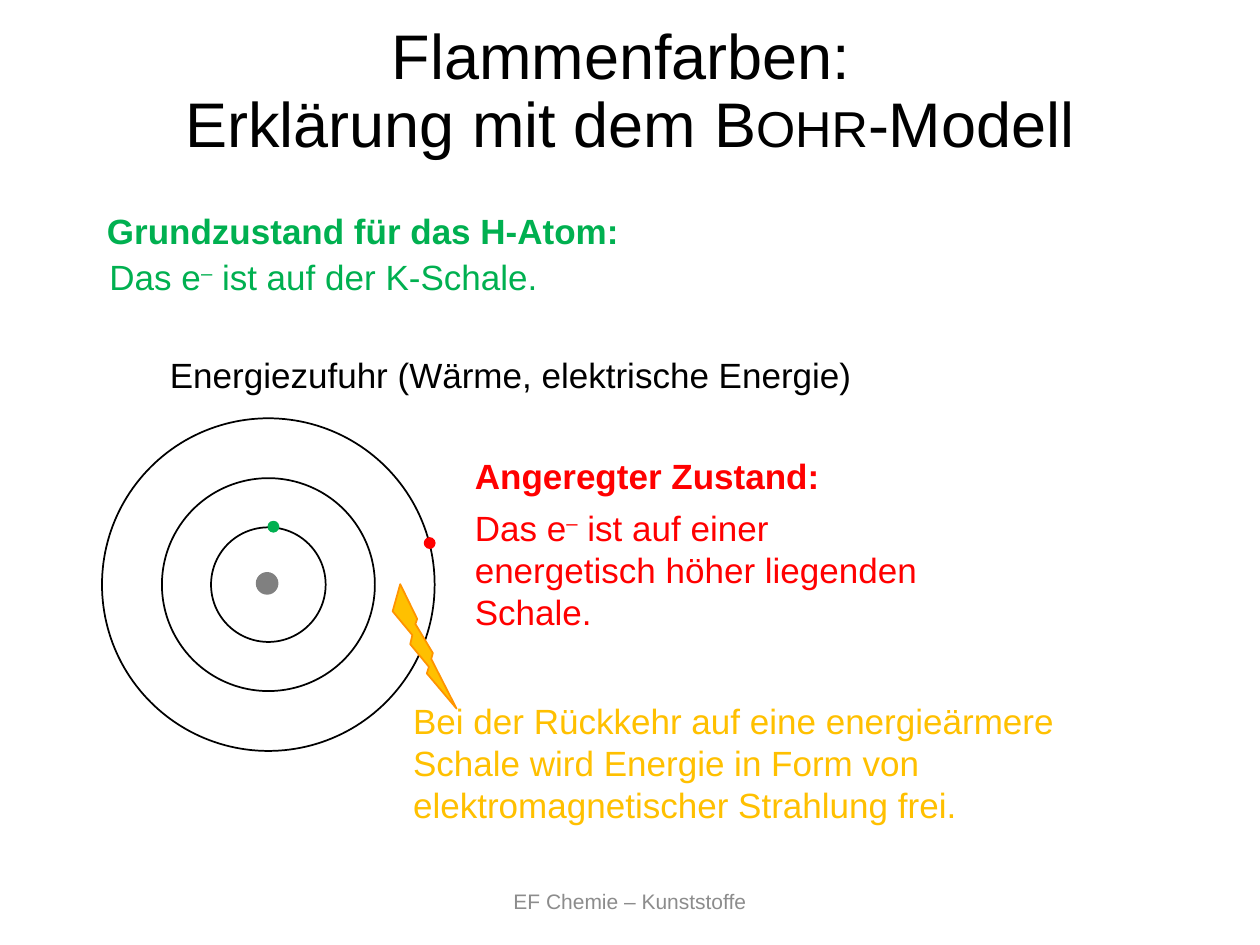
import pptx
import pptx.util
import pptx.dml.color
import pptx.enum.shapes
import pptx.enum.text

Inches, Pt = pptx.util.Inches, pptx.util.Pt
Kind = pptx.enum.shapes.MSO_SHAPE
Align = pptx.enum.text.PP_ALIGN
Anchor = pptx.enum.text.MSO_ANCHOR
Fit = pptx.enum.text.MSO_AUTO_SIZE

BLACK, GRAY, GREEN, RED, GOLD = "000000", "808080", "00B050", "FF0000", "FFC000"

TITLE = [("Flammenfarben: \vErklärung mit dem ", ""), ("Bohr", "small"), ("-Modell", "")]
FOOTER = [("EF Chemie – Kunststoffe", "")]
NOTES = [
    ((0.75, 1.61, 4.85, 0.62), GREEN, [("Grundzustand für das H-Atom:", "bold")]),
    ((0.77, 1.98, 3.86, 0.44), GREEN,
     [("Das e", ""), ("–", "super"), (" ist auf der K-Schale.", "")]),
    ((3.67, 3.97, 3.86, 1.11), RED,
     [("Das e", ""), ("–", "super"),
      (" ist auf einer energetisch höher liegenden Schale.", "")]),
    ((3.67, 3.56, 4.85, 0.62), RED, [("Angeregter Zustand:", "bold")]),
    ((1.25, 2.76, 5.77, 0.44), BLACK,
     [("Energiezufuhr (Wärme, elektrische Energie)", "")]),
    ((3.18, 5.5, 5.82, 1.11), GOLD,
     [("Bei der Rückkehr auf eine energieärmere Schale wird Energie "
       "in Form von elektromagnetischer Strahlung frei.", "")]),
]
CENTER = (2.13, 4.64)
SHELLS = [0.91, 1.69, 2.64]
NUCLEUS = ((2.12, 4.63), 0.18)
ELECTRONS = [((2.17, 4.18), GREEN), ((3.41, 4.31), RED)]
BOLT = (3.2, 4.61, 0.29, 1.07)


def color(code):
    return pptx.dml.color.RGBColor.from_string(code)


def place(item, box):
    item.left, item.top, item.width, item.height = map(Inches, box)


def write(frame, runs, size, code, align=Align.LEFT, anchor=Anchor.TOP):
    frame.word_wrap = True
    frame.auto_size = Fit.NONE
    frame.vertical_anchor = anchor
    para = frame.paragraphs[0]
    para.alignment = align
    for text, style in runs:
        for i, part in enumerate(text.split("\v")):
            if i:
                para.add_line_break()
            run = para.add_run()
            run.text = part
            font = run.font
            font.name, font.size, font.bold = "Arial", Pt(size), style == "bold"
            font.color.rgb = color(code)
            props = run._r.get_or_add_rPr()
            if style == "small":
                props.set("cap", "small")
            elif style == "super":
                props.set("baseline", "30000")
    return para


def label(slide, box, *args):
    write(slide.shapes.add_textbox(*map(Inches, box)).text_frame, *args)


def draw(slide, kind, box, fill=None, line=None):
    shape = slide.shapes.add_shape(kind, *map(Inches, box))
    shape.shadow.inherit = False
    if fill:
        shape.fill.solid()
        shape.fill.fore_color.rgb = color(fill)
    else:
        shape.fill.background()
    if line:
        shape.line.color.rgb = color(line)
        shape.line.width = Pt(1)
    else:
        shape.line.fill.background()
    return shape


def circle(slide, mid, size, fill=None, line=None):
    x, y = mid
    draw(slide, Kind.OVAL, (x - size / 2, y - size / 2, size, size), fill, line)


def main():
    deck = pptx.Presentation()
    deck.slide_width, deck.slide_height = Inches(10), Inches(7.5)
    slide = deck.slides.add_slide(deck.slide_layouts[5])

    title = slide.shapes.title
    place(title, (0.5, 0.05, 9, 1.38))
    para = write(title.text_frame, TITLE, 36, BLACK, Align.CENTER, Anchor.MIDDLE)
    para.line_spacing = 0.9
    label(slide, (3.31, 6.95, 3.38, 0.4), FOOTER, 12, "8C8C8C",
          Align.CENTER, Anchor.MIDDLE)

    circle(slide, *NUCLEUS, fill=GRAY)
    for size in SHELLS:
        circle(slide, CENTER, size, line=BLACK)
    for box, code, runs in NOTES:
        label(slide, box, runs, 20, code)
    for mid, code in ELECTRONS:
        circle(slide, mid, 0.08, code, code)
    bolt = draw(slide, Kind.LIGHTNING_BOLT, BOLT, GOLD, "FF9300")
    bolt.rotation = 345

    deck.save("out.pptx")


if __name__ == "__main__":
    main()
